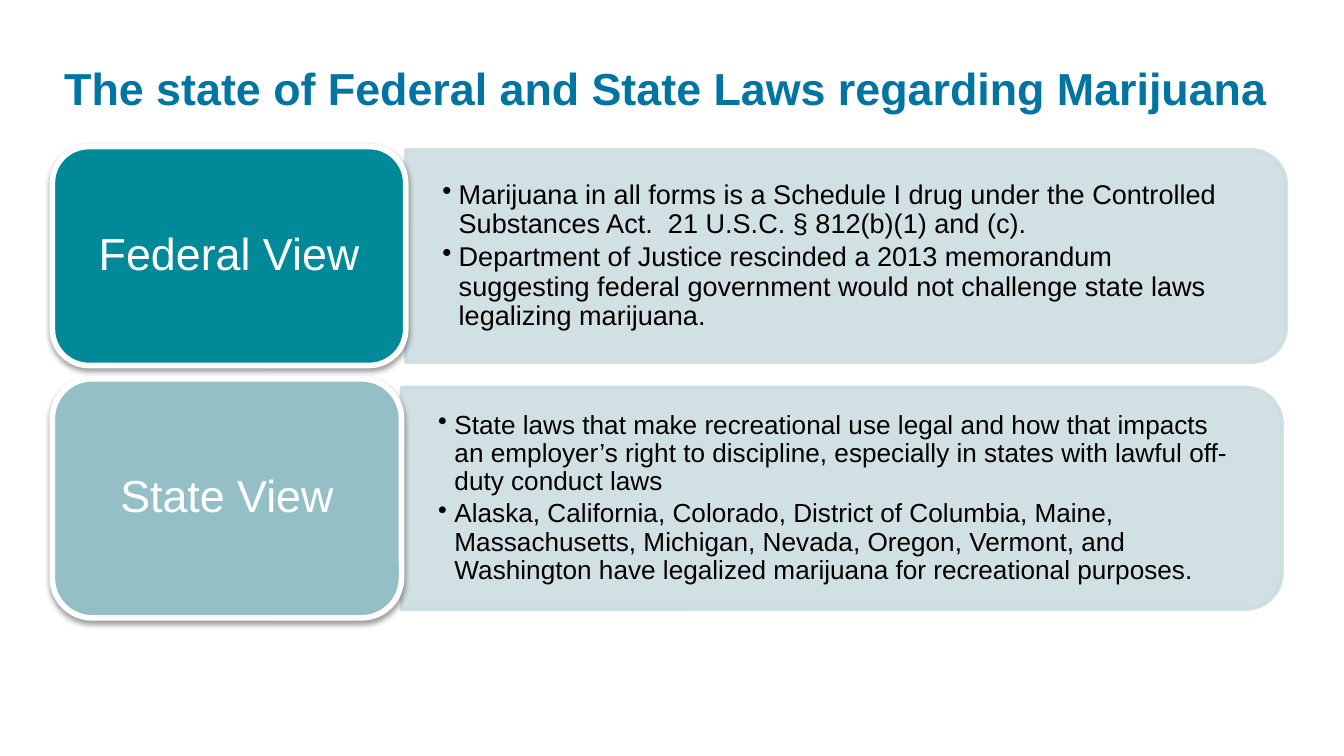
from dataclasses import dataclass

from lxml import etree
from pptx import Presentation, util as u
from pptx.dml.color import RGBColor
from pptx.enum import shapes, text
from pptx.oxml import ns

BLUE = RGBColor(0x01, 0x74, 0xA1)
TEAL = RGBColor(0x00, 0x89, 0x98)
PALE_TEAL = RGBColor(0x95, 0xBF, 0xC7)
MIST = RGBColor(0xCC, 0xDD, 0xE1)
WHITE = RGBColor(0xFF, 0xFF, 0xFF)
BLACK = RGBColor(0, 0, 0)

LABEL_LEFT = 0.99
PANEL_WIDTH = 16.64
BULLETS_WIDTH = 16.43


@dataclass(frozen=True)
class View:
    name: str
    color: RGBColor
    center: float
    label_width: float
    label_height: float
    panel_height: float
    points_size: float
    points: tuple[str, ...]

    @property
    def panel_left(self) -> float:
        return LABEL_LEFT + self.label_width


VIEWS = (
    View("Federal View", TEAL, 4.84, 6.68, 4.14, 4.01, 14.5, (
        "Marijuana in all forms is a Schedule I drug under the Controlled "
        "Substances Act.  21 U.S.C. § 812(b)(1) and (c).",
        "Department of Justice rescinded a 2013 memorandum suggesting federal "
        "government would not challenge state laws legalizing marijuana.",
    )),
    View("State View", PALE_TEAL, 9.42, 6.6, 4.52, 4.19, 14, (
        "State laws that make recreational use legal and how that impacts an "
        "employer’s right to discipline, especially in states with lawful "
        "off-duty conduct laws",
        "Alaska, California, Colorado, District of Columbia, Maine, "
        "Massachusetts, Michigan, Nevada, Oregon, Vermont, and Washington have "
        "legalized marijuana for recreational purposes.",
    )),
)


def add_child(parent, tag: str, **attributes: str):
    return etree.SubElement(parent, ns.qn(tag), attributes)


def format_runs(paragraph, size: float, color: RGBColor, bold: bool = False) -> None:
    for run in paragraph.runs:
        run.font.name = "Arial"
        run.font.size = u.Pt(size)
        run.font.bold = bold
        run.font.color.rgb = color


def set_frame(frame, anchor, inset_x: float, inset_y: float) -> None:
    frame.word_wrap = True
    frame.vertical_anchor = anchor
    frame.margin_left = frame.margin_right = u.Cm(inset_x)
    frame.margin_top = frame.margin_bottom = u.Cm(inset_y)


def paint(shape, fill: RGBColor, line: RGBColor, line_width: float) -> None:
    shape.shadow.inherit = False
    shape.fill.solid()
    shape.fill.fore_color.rgb = fill
    shape.line.color.rgb = line
    shape.line.width = u.Pt(line_width)


def draw_title(slide, title: str) -> None:
    box = slide.shapes.add_textbox(u.Cm(0.86), u.Cm(0.81), u.Cm(23.67), u.Cm(1.6))
    set_frame(box.text_frame, text.MSO_ANCHOR.BOTTOM, 0.25, 0.25)
    box.text_frame.text = title
    heading = box.text_frame.paragraphs[0]
    heading.alignment = text.PP_ALIGN.CENTER
    format_runs(heading, 24, BLUE, bold=True)


def draw_panel(slide, view: View) -> None:
    middle = view.panel_left + PANEL_WIDTH / 2
    panel = slide.shapes.add_shape(
        shapes.MSO_SHAPE.ROUND_2_SAME_RECTANGLE,
        u.Cm(middle - view.panel_height / 2), u.Cm(view.center - PANEL_WIDTH / 2),
        u.Cm(view.panel_height), u.Cm(PANEL_WIDTH))
    panel.rotation = 90
    paint(panel, MIST, MIST, 2)
    for color in panel._element.spPr.iter(ns.qn("a:srgbClr")):
        add_child(color, "a:alpha", val="90000")


def draw_points(slide, view: View) -> None:
    height = view.panel_height - 0.39
    box = slide.shapes.add_textbox(
        u.Cm(view.panel_left), u.Cm(view.center - height / 2),
        u.Cm(BULLETS_WIDTH), u.Cm(height))
    frame = box.text_frame
    set_frame(frame, text.MSO_ANCHOR.MIDDLE, 0.69, 0.36)
    frame.text = "\n".join(view.points)
    for point in frame.paragraphs:
        point.level = 1
        point.line_spacing = 0.9
        point.space_after = u.Pt(2.2)
        properties = point._p.get_or_add_pPr()
        properties.set("marL", str(u.Cm(0.31)))
        properties.set("indent", str(-u.Cm(0.31)))
        add_child(properties, "a:buChar", char="•")
        format_runs(point, view.points_size, BLACK)


def draw_label(slide, view: View) -> None:
    label = slide.shapes.add_shape(
        shapes.MSO_SHAPE.ROUNDED_RECTANGLE,
        u.Cm(LABEL_LEFT), u.Cm(view.center - view.label_height / 2),
        u.Cm(view.label_width), u.Cm(view.label_height))
    paint(label, view.color, WHITE, 3)
    effects = label._element.spPr.find(ns.qn("a:effectLst"))
    shadow = add_child(effects, "a:outerShdw", blurRad=str(u.Pt(3.1)),
                       dist=str(u.Pt(1.6)), dir="5400000", rotWithShape="0")
    color = add_child(shadow, "a:srgbClr", val=str(BLACK))
    add_child(color, "a:alpha", val="38000")
    set_frame(label.text_frame, text.MSO_ANCHOR.MIDDLE, 0.25, 0.13)
    label.text_frame.text = view.name
    name = label.text_frame.paragraphs[0]
    name.alignment = text.PP_ALIGN.CENTER
    name.line_spacing = 0.9
    format_runs(name, 24, WHITE)


def main() -> None:
    deck = Presentation()
    deck.slide_width, deck.slide_height = u.Cm(25.4), u.Cm(14.29)
    slide = deck.slides.add_slide(deck.slide_layouts[6])
    draw_title(slide, "The state of Federal and State Laws regarding Marijuana ")
    for view in VIEWS:
        draw_panel(slide, view)
        draw_points(slide, view)
        draw_label(slide, view)
    deck.save("out.pptx")


if __name__ == "__main__":
    main()
